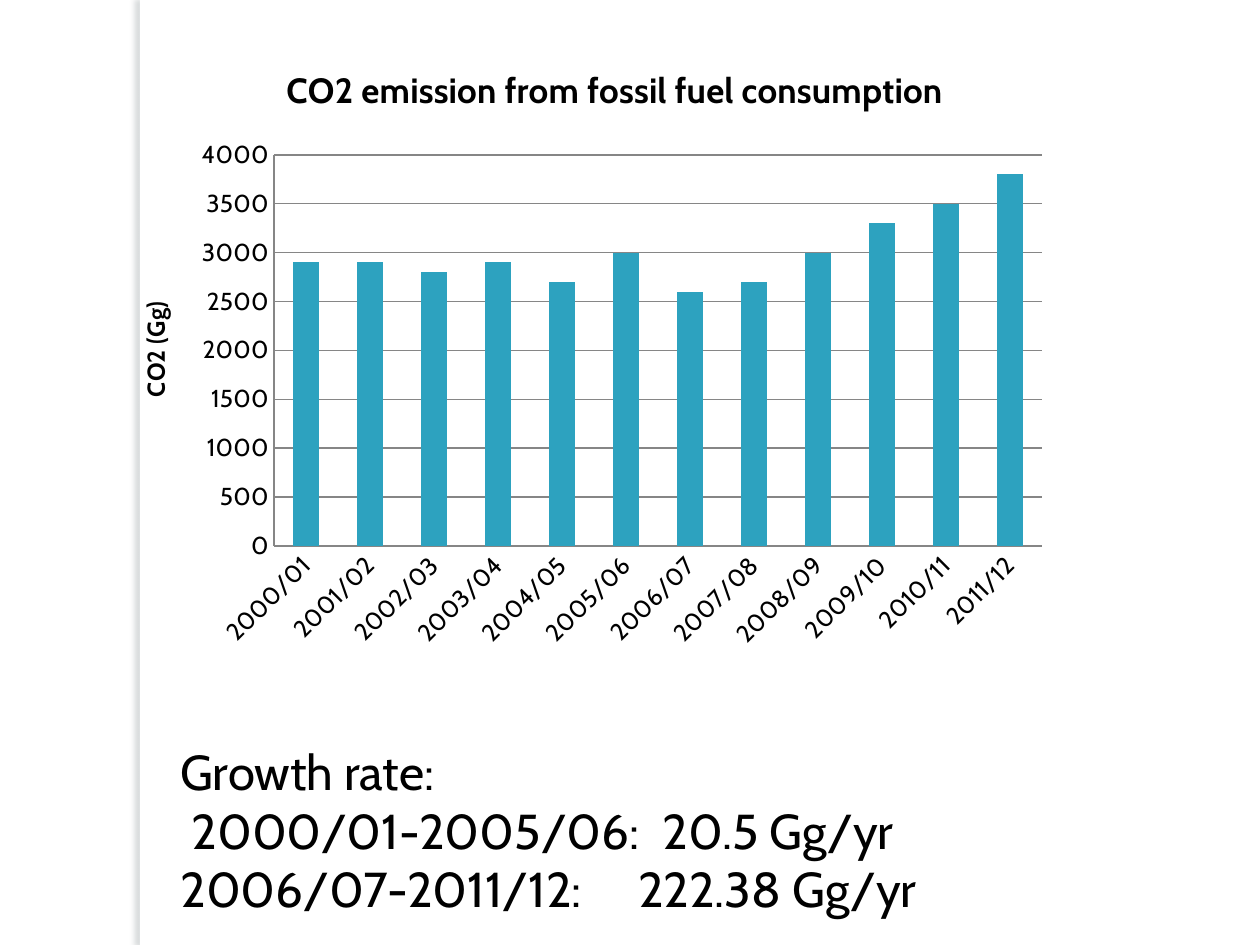
from lxml import etree
from pptx import Presentation
from pptx.chart.data import CategoryChartData
from pptx.dml.color import RGBColor
from pptx.enum.chart import XL_CHART_TYPE, XL_TICK_MARK
from pptx.enum.shapes import MSO_SHAPE
from pptx.enum.text import MSO_AUTO_SIZE
from pptx.oxml import parse_xml
from pptx.oxml.ns import nsdecls, qn
from pptx.util import Pt

COLUMN = XL_CHART_TYPE.COLUMN_CLUSTERED
NO_TICK = XL_TICK_MARK.NONE
RECT = MSO_SHAPE.RECTANGLE
GROW = MSO_AUTO_SIZE.SHAPE_TO_FIT_TEXT
SCALE = 914400 / 126
FONT = "Cabin"
COLORS = {"text": "000000", "paper": "FFFFFF", "shadow": "6E7A7D",
          "bar": "2DA2BF", "line": "868686"}

EMISSIONS = {
    "2000/01": 2900, "2001/02": 2900, "2002/03": 2800, "2003/04": 2900,
    "2004/05": 2700, "2005/06": 3000, "2006/07": 2600, "2007/08": 2700,
    "2008/09": 3000, "2009/10": 3300, "2010/11": 3500, "2011/12": 3800,
}
GROWTH = [(0, 0, ["Growth rate:"]),
          (11, 7, ["2000/01-2005/06:", " ", "20.5 Gg/yr"]),
          (0, 26, ["2006/07-2011/12:", " ", "222.38 Gg/yr"])]


def emu(px):
    return round(px * SCALE)


def rgb(name):
    return RGBColor.from_string(COLORS[name])


class Deck:
    """Holds the slide style and adds each kind of element."""

    def __init__(self, width, height):
        self.prs = Presentation()
        self.prs.slide_width, self.prs.slide_height = emu(width), emu(height)
        self.s = self.prs.slides.add_slide(self.prs.slide_layouts[6])

    def style(self, font, size, bold=False):
        font.name, font.size, font.bold = FONT, Pt(size), bold
        font.color.rgb = rgb("text")

    def strip(self, *box):
        sp = self.s.shapes.add_shape(RECT, *map(emu, box))
        sp.fill.solid()
        sp.fill.fore_color.rgb = rgb("paper")
        sp.line.fill.background()
        sp.shadow.inherit = False
        effects = sp._element.spPr.find(qn("a:effectLst"))
        effects.append(parse_xml(
            f'<a:outerShdw {nsdecls("a")} blurRad="{Pt(3)}" dist="{Pt(3)}" '
            f'dir="10800000" rotWithShape="0"><a:srgbClr val="{COLORS["shadow"]}">'
            '<a:alpha val="25000"/></a:srgbClr></a:outerShdw>'))

    def layout(self, parent, index, size, **places):
        old = parent.find(qn("c:layout"))
        if old is not None:
            parent.remove(old)
        node = etree.Element(qn("c:layout"))
        manual = etree.SubElement(node, qn("c:manualLayout"))
        if "w" in places:
            etree.SubElement(manual, qn("c:layoutTarget"), val="inner")
        for key in "xy":
            etree.SubElement(manual, qn(f"c:{key}Mode"), val="edge")
        for key, px in places.items():
            whole = size[0] if key in "xw" else size[1]
            etree.SubElement(manual, qn(f"c:{key}"), val=str(px / whole))
        parent.insert(index, node)

    def title(self, title, text, points, size, x, y):
        r = title.text_frame.paragraphs[0].add_run()
        r.text = text
        self.style(r.font, points, True)
        self.layout(title._element, 1, size, x=x, y=y)

    def chart(self, values, title, axis_title, *box):
        data = CategoryChartData()
        data.categories = list(values)
        data.add_series("Series 1", list(values.values()))
        chart = self.s.shapes.add_chart(COLUMN, *map(emu, box), data).chart
        size = box[2:]
        self.style(chart.font, 10)
        chart.has_legend = False
        self.title(chart.chart_title, title, 20, size, 164, 6)
        plot = chart.plots[0]
        plot.gap_width, plot.vary_by_categories = 150, False
        fill = plot.series[0].format.fill
        fill.solid()
        fill.fore_color.rgb = rgb("bar")
        cat, val = chart.category_axis, chart.value_axis
        val.minimum_scale, val.maximum_scale, val.major_unit = 0, 4000, 500
        val.has_major_gridlines = True
        self.title(val.axis_title, axis_title, 14, size, 18, 244)
        for axis in (cat, val):
            axis.major_tick_mark = axis.minor_tick_mark = NO_TICK
            self.style(axis.tick_labels.font, 14)
        for part in (cat, val, val.major_gridlines):
            part.format.line.color.rgb = rgb("line")
            part.format.line.width = Pt(0.75)
        cat._element.find(qn("c:txPr")).find(qn("a:bodyPr")).set("rot", "-2700000")
        area = chart._chartSpace.chart.plotArea
        self.layout(area, 0, size, x=158, y=102, w=768, h=391)

    def text(self, lines, size, *box):
        tf = self.s.shapes.add_textbox(*map(emu, box)).text_frame
        tf.word_wrap, tf.auto_size = True, GROW
        for i, (indent, gap, runs) in enumerate(lines):
            p = tf.add_paragraph() if i else tf.paragraphs[0]
            pPr = p._p.get_or_add_pPr()
            pPr.set("marL", str(emu(indent)))
            pPr.set("indent", "0")
            for text in runs:
                r = p.add_run()
                r.text = text
                self.style(r.font, size)
                if text == " ":
                    r._r.get_or_add_rPr().set("spc", str(gap * 100))


def main():
    deck = Deck(1260, 945)
    deck.strip(140, 0, 10, 945)
    deck.chart(EMISSIONS, "CO2 emission from fossil fuel consumption", "CO2 (Gg)",
               116, 53, 945, 609)
    deck.text(GROWTH, 28, 168, 735, 777, 190)
    deck.prs.save("out.pptx")


if __name__ == "__main__":
    main()
